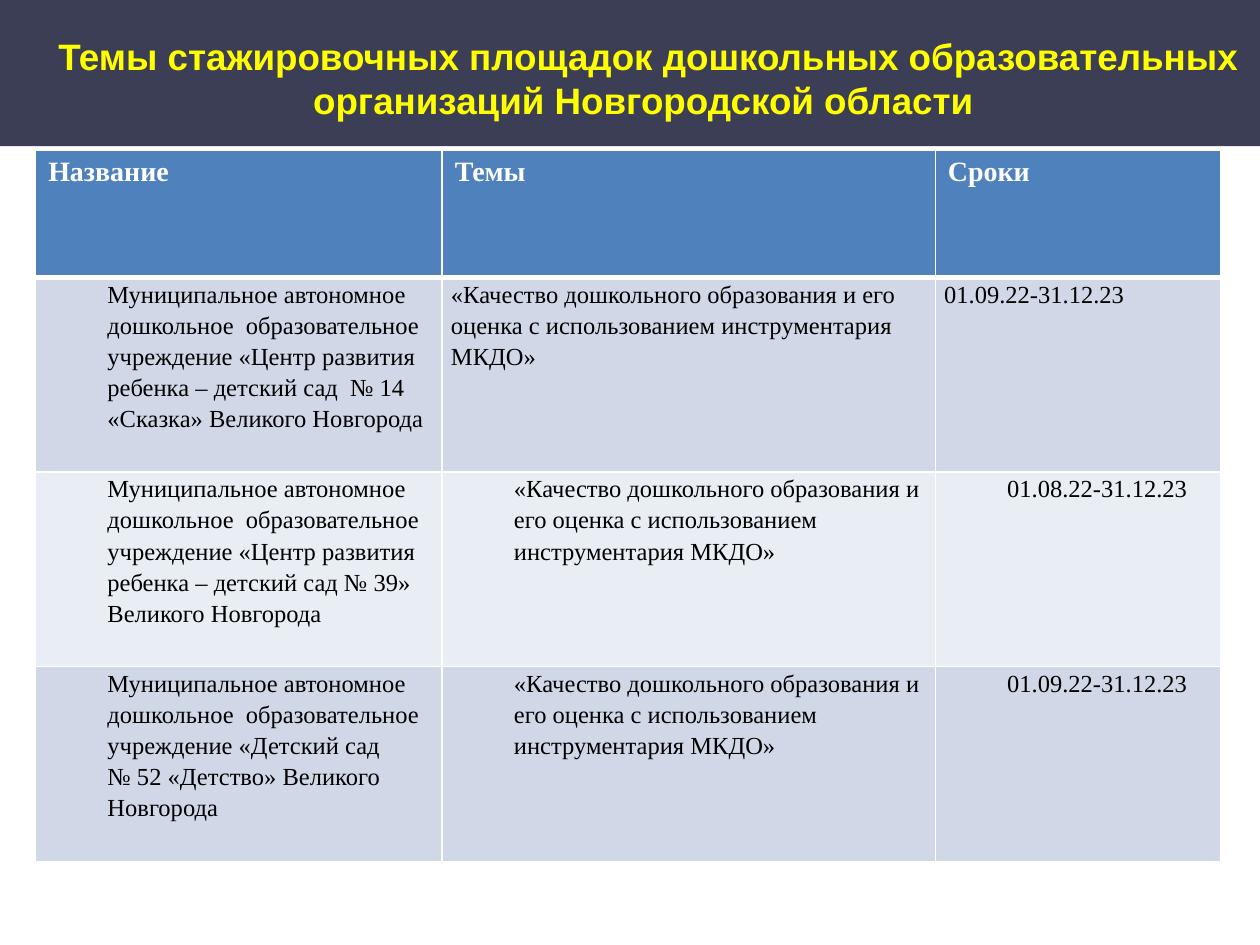
from dataclasses import dataclass

from lxml import etree
from pptx import Presentation
from pptx.dml.color import RGBColor
from pptx.enum import shapes, text
from pptx.oxml import ns
from pptx.util import Pt

COLORS = {
    "band": "3B3E54",
    "title": "FFFF00",
    "header": "4F81BD",
    "odd": "D0D8E8",
    "even": "E9EDF4",
    "white": "FFFFFF",
    "black": "000000",
}
TITLE = "Темы стажировочных площадок дошкольных образовательных организаций Новгородской области "
HEADERS = ["Название", "Темы", "Сроки"]
TOPIC = "«Качество дошкольного образования и его оценка с использованием инструментария МКДО»"
COLUMN_WIDTHS = [232.3, 281.8, 163.2]
HEADER_HEIGHT, ROW_HEIGHT = 72.4, 111.3
INDENT = 36


@dataclass
class Site:
    name: list[str]
    dates: str
    indent: float = INDENT


@dataclass
class CellStyle:
    fill: str
    color: str
    size: float
    bold: bool = False
    spacing: float = 1.0
    bottom: float = 1


SITES = [
    Site(["Муниципальное автономное",
          "дошкольное  образовательное учреждение «Центр развития ребенка – "
          "детский сад  № 14 «Сказка» Великого Новгорода"],
         "01.09.22-31.12.23", indent=0),
    Site(["Муниципальное автономное",
          "дошкольное  образовательное учреждение «Центр развития ребенка – "
          "детский сад № 39» Великого Новгорода"],
         "01.08.22-31.12.23"),
    Site(["Муниципальное автономное",
          "дошкольное  образовательное учреждение «Детский сад",
          "№ 52 «Детство» Великого Новгорода"],
         "01.09.22-31.12.23"),
]


def rgb(name: str) -> RGBColor:
    return RGBColor.from_string(COLORS[name])


def format_font(font, name: str, size: float, color: str, bold: bool) -> None:
    font.name, font.size, font.bold = name, Pt(size), bold
    font.color.rgb = rgb(color)


def add_borders(cell, bottom: float) -> None:
    tc_pr = cell._tc.get_or_add_tcPr()
    for side, width in (("L", 1), ("R", 1), ("T", 1), ("B", bottom)):
        ln = etree.SubElement(tc_pr, ns.qn(f"a:ln{side}"), w=str(Pt(width)))
        fill = etree.SubElement(ln, ns.qn("a:solidFill"))
        etree.SubElement(fill, ns.qn("a:srgbClr"), val=COLORS["white"])


def fill_cell(cell, lines: list[str], style: CellStyle, indent: float = 0) -> None:
    add_borders(cell, style.bottom)
    cell.fill.solid()
    cell.fill.fore_color.rgb = rgb(style.fill)
    tf = cell.text_frame
    tf.text = "\n".join(lines)
    for p in tf.paragraphs:
        p.line_spacing = style.spacing
        if indent:
            p._p.get_or_add_pPr().set("marL", str(Pt(indent)))
        for r in p.runs:
            format_font(r.font, "Times New Roman", style.size, style.color, style.bold)


def add_band(s) -> None:
    sp = s.shapes.add_shape(shapes.MSO_SHAPE.RECTANGLE, 0, 0, Pt(720), Pt(83.6))
    sp.shadow.inherit = False
    sp.fill.solid()
    sp.fill.fore_color.rgb = rgb("band")
    sp.line.fill.background()
    s.shapes._spTree.insert(2, sp._element)


def add_title(s) -> None:
    sp = s.shapes.title
    sp.left, sp.top, sp.width, sp.height = Pt(31), Pt(18.7), Pt(679), Pt(51.2)
    tf = sp.text_frame
    tf.text = TITLE
    tf.word_wrap = True
    tf.auto_size = text.MSO_AUTO_SIZE.NONE
    tf.vertical_anchor = text.MSO_ANCHOR.MIDDLE
    tf.margin_left = tf.margin_right = tf.margin_top = tf.margin_bottom = 0
    p = tf.paragraphs[0]
    p.alignment = text.PP_ALIGN.CENTER
    format_font(p.runs[0].font, "Arial", 21, "title", True)


def add_sites_table(s) -> None:
    height = HEADER_HEIGHT + ROW_HEIGHT * len(SITES)
    table = s.shapes.add_table(len(SITES) + 1, len(HEADERS), Pt(20.4), Pt(86),
                               Pt(sum(COLUMN_WIDTHS)), Pt(height)).table
    for column, width in zip(table.columns, COLUMN_WIDTHS):
        column.width = Pt(width)
    for i, row in enumerate(table.rows):
        row.height = Pt(ROW_HEIGHT if i else HEADER_HEIGHT)

    header = CellStyle("header", "white", 16, bold=True, bottom=3)
    for cell, label in zip(table.rows[0].cells, HEADERS):
        fill_cell(cell, [label], header)

    for i, site in enumerate(SITES, 1):
        style = CellStyle("odd" if i % 2 else "even", "black", 14, spacing=1.15)
        columns = [(site.name, INDENT), ([TOPIC], site.indent), ([site.dates], site.indent)]
        for cell, (lines, indent) in zip(table.rows[i].cells, columns):
            cell.margin_left = cell.margin_right = Pt(5)
            cell.margin_top = cell.margin_bottom = 0
            fill_cell(cell, lines, style, indent)
            if i == 1:
                tc_pr = cell._tc.tcPr
                tc_pr.find(ns.qn("a:lnT")).set("w", str(Pt(header.bottom)))


def main() -> None:
    prs = Presentation()
    prs.slide_width, prs.slide_height = Pt(720), Pt(540)
    s = prs.slides.add_slide(prs.slide_layouts[5])
    add_band(s)
    add_title(s)
    add_sites_table(s)
    prs.save("out.pptx")


if __name__ == "__main__":
    main()
